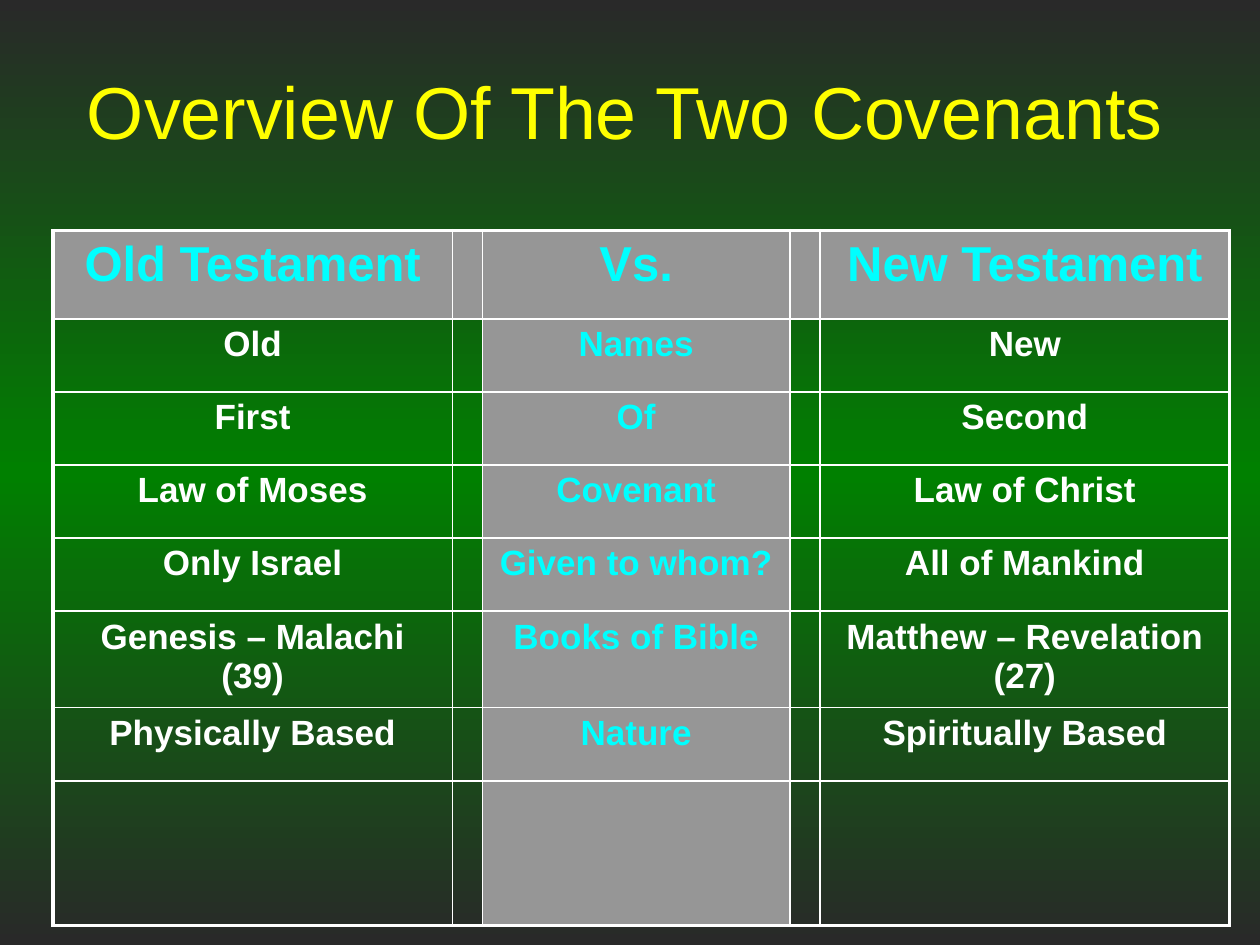
from copy import deepcopy

from lxml.etree import SubElement
from pptx import Presentation
from pptx.dml.color import RGBColor as RGB
from pptx.enum.text import MSO_ANCHOR as ANCHOR, PP_ALIGN as ALIGN
from pptx.oxml import parse_xml
from pptx.oxml.ns import nsdecls, qn
from pptx.util import Inches, Pt

COLORS = {"edge": "292929", "green": "008000", "title": "FFFF00",
          "heading": "00FFFF", "body": "FFFFFF", "gray": "969696", "rule": "FFFFFF"}
COLUMNS = [3.17, 0.23, 2.44, 0.23, 3.25]
ROWS = [0.7] + [0.58] * 6 + [1.15]
COVENANTS = [
    ("Old Testament", "Vs.", "New Testament"),
    ("Old", "Names", "New"),
    ("First", "Of", "Second"),
    ("Law of Moses", "Covenant", "Law of Christ"),
    ("Only Israel", "Given to whom?", "All of Mankind"),
    ("Genesis – Malachi (39)", "Books of Bible", "Matthew – Revelation (27)"),
    ("Physically Based", "Nature", "Spiritually Based"),
    ("", "", ""),
]


def write(frame, text, color, size, bold):
    paragraph = frame.paragraphs[0]
    paragraph.alignment = ALIGN.CENTER
    run = paragraph.add_run()
    run.text = text
    run.font.color.rgb = RGB.from_string(COLORS[color])
    for name, value in {"name": "Arial", "size": Pt(size), "bold": bold}.items():
        setattr(run.font, name, value)


def add_border(cell, position, side, width):
    line = parse_xml(f'<a:ln{side} {nsdecls("a")} w="{Pt(width)}"/>')
    fill = SubElement(line, qn("a:solidFill"))
    SubElement(fill, qn("a:srgbClr"), val=COLORS["rule"])
    cell._tc.get_or_add_tcPr().insert(position, line)


prs = Presentation()
prs.slide_width, prs.slide_height = Inches(10), Inches(7.5)
slide = prs.slides.add_slide(prs.slide_layouts[6])

# Background: dark at top and bottom, green in the middle
backdrop = slide.background.fill
backdrop.gradient()
backdrop.gradient_angle = 270
first_stop = backdrop.gradient_stops[0]._gs
first_stop.getparent().append(deepcopy(first_stop))
for stop, position, color in zip(backdrop.gradient_stops, (0, 0.5, 1), ("edge", "green", "edge")):
    stop.position = position
    stop.color.rgb = RGB.from_string(COLORS[color])

# Title
title = slide.shapes.add_textbox(Inches(0.25), Inches(0.25), Inches(9.58), Inches(1.25)).text_frame
for name, value in {"word_wrap": True, "vertical_anchor": ANCHOR.MIDDLE}.items():
    setattr(title, name, value)
write(title, "Overview Of The Two Covenants ", "title", 42, False)

# Comparison table, with narrow empty columns between the three text columns
comparison = slide.shapes.add_table(
    len(ROWS), len(COLUMNS), Inches(0.42), Inches(1.83),
    Inches(sum(COLUMNS)), Inches(sum(ROWS))).table
comparison.first_row = comparison.horz_banding = False
for column, width in zip(comparison.columns, COLUMNS):
    column.width = Inches(width)
for row, height in zip(comparison.rows, ROWS):
    row.height = Inches(height)

last_row, last_col = len(ROWS) - 1, len(COLUMNS) - 1
for r, entries in enumerate(COVENANTS):
    for c in range(len(COLUMNS)):
        cell = comparison.cell(r, c)
        text = entries[c // 2] if c % 2 == 0 else ""
        is_label = r == 0 or c == 2
        if text:
            write(cell.text_frame, text, "heading" if is_label else "body",
                  28 if r == 0 else 20, True)
        if is_label:
            cell.fill.solid()
            cell.fill.fore_color.rgb = RGB.from_string(COLORS["gray"])
        else:
            cell.fill.background()
        # Thick rules on the outer frame, thin ones inside
        outer = {"L": c == 0, "R": c == last_col, "T": r == 0, "B": r == last_row}
        for position, (side, is_outer) in enumerate(outer.items()):
            add_border(cell, position, side, 2.25 if is_outer else 1)

prs.save("out.pptx")
